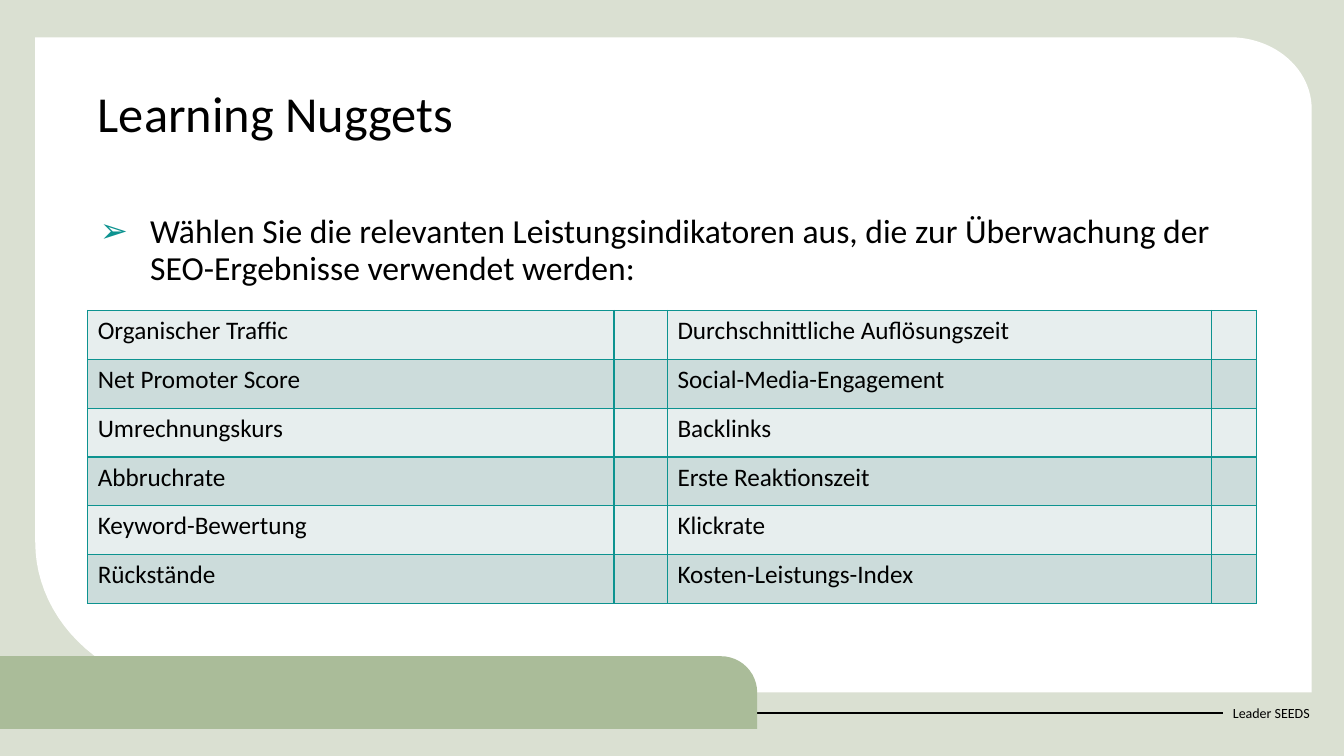
from math import cos, pi, sin

from lxml import etree
from pptx import Presentation
from pptx.dml.color import RGBColor
from pptx.enum.shapes import MSO_CONNECTOR, MSO_SHAPE
from pptx.enum.text import MSO_ANCHOR, MSO_AUTO_SIZE, PP_ALIGN
from pptx.oxml.ns import qn
from pptx.util import Inches, Pt

STRAIGHT = MSO_CONNECTOR.STRAIGHT
ROUND_CORNER = MSO_SHAPE.ROUND_1_RECTANGLE
TOP, MIDDLE = MSO_ANCHOR.TOP, MSO_ANCHOR.MIDDLE
NO_AUTOFIT = MSO_AUTO_SIZE.NONE
LEFT = PP_ALIGN.LEFT

FONT = "Calibri"
BLACK, WHITE, TEAL = "000000", "FFFFFF", "0D9390"
SAGE, PALE_SAGE = "AABC99", "DAE0D2"
ROW_FILLS = ("E7EEEE", "CCDCDB")
COLUMN_WIDTHS = (5.22, 0.53, 5.4, 0.44)
INDICATORS = (
    ("Organischer Traffic", "Durchschnittliche Auflösungszeit"),
    ("Net Promoter Score", "Social-Media-Engagement"),
    ("Umrechnungskurs", "Backlinks"),
    ("Abbruchrate", "Erste Reaktionszeit"),
    ("Keyword-Bewertung", "Klickrate"),
    ("Rückstände", "Kosten-Leistungs-Index"),
)


def color(value):
    """Turn a hex string into a colour."""
    return RGBColor.from_string(value)


def paint(shape, fill):
    """Give a shape a plain fill without line or shadow."""
    shape.shadow.inherit = False
    shape.fill.solid()
    shape.fill.fore_color.rgb = color(fill)
    shape.line.fill.background()


def write(frame, text, size):
    """Put one left-aligned black paragraph in a text frame."""
    frame.text = text
    para = frame.paragraphs[0]
    para.alignment = LEFT
    for span in para.runs:
        span.font.name = FONT
        span.font.size = Pt(size)
        span.font.color.rgb = color(BLACK)
    return para


def place(shape, box):
    """Move a shape to a box given in inches."""
    shape.left, shape.top, shape.width, shape.height = map(Inches, box)


def corner(center, radii, start, steps=24):
    """Return the points of a quarter ellipse, clockwise from a start angle."""
    angles = [start + pi / 2 * step / steps for step in range(steps + 1)]
    return [(center[0] + radii[0] * cos(angle), center[1] + radii[1] * sin(angle))
            for angle in angles]


def add_panel(page, box):
    """Draw the white panel with two rounded corners."""
    left, top, width, height = box
    right, bottom = left + width, top + height
    small, large = (0.81, 0.71), (1.7, 1.49)
    points = corner((right - small[0], top + small[1]), small, -pi / 2)
    points.append((right, bottom))
    points += corner((left + large[0], bottom - large[1]), large, pi / 2)
    builder = page.shapes.build_freeform(Inches(left), Inches(top))
    builder.add_line_segments([(Inches(x), Inches(y)) for x, y in points], close=True)
    paint(builder.convert_to_shape(), WHITE)


def add_footer(page, box):
    """Draw the footer line, its label and the sage banner."""
    left, top, width, height = box
    label_width, label_height = 1.01, 0.4
    label_left, label_top = left + width - label_width, top + 0.36
    label = page.shapes.add_textbox(
        *map(Inches, (label_left, label_top, label_width, label_height)))
    label.text_frame.word_wrap = True
    label.text_frame.vertical_anchor = MIDDLE
    write(label.text_frame, "Leader SEEDS", 10)

    line_y = label_top + label_height / 2
    line = page.shapes.add_connector(
        STRAIGHT, *map(Inches, (left, line_y, label_left, line_y)))
    line.end_connect(label, 1)
    line.line.color.rgb = color(BLACK)
    line.line.width = Pt(1.5)
    etree.SubElement(line.element.spPr, qn("a:effectLst"))

    banner = page.shapes.add_shape(
        ROUND_CORNER, *map(Inches, (left, top, 7.51, height)))
    banner.adjustments[0] = 0.5
    paint(banner, SAGE)


def fill_placeholder(page, placeholder, box, text, size):
    """Bring a placeholder to the front, place it and fill it."""
    page.shapes.element.append(placeholder.element)
    place(placeholder, box)
    frame = placeholder.text_frame
    frame.word_wrap = True
    frame.auto_size = NO_AUTOFIT
    frame.vertical_anchor = TOP
    para = write(frame, text, size)
    para.line_spacing = 0.9
    para.space_before = Pt(0)
    return para


def add_bullet(para, char):
    """Give a paragraph a teal bullet with a hanging indent."""
    properties = para._p.get_or_add_pPr()
    properties.set("marL", str(Inches(0.52)))
    properties.set("indent", str(Inches(-0.5)))
    bullet_color = etree.SubElement(properties, qn("a:buClr"))
    etree.SubElement(bullet_color, qn("a:srgbClr"), val=TEAL)
    etree.SubElement(properties, qn("a:buChar"), char=char)


def add_borders(cell):
    """Draw teal lines on the four sides of a cell."""
    properties = cell._tc.get_or_add_tcPr()
    for side in ("lnL", "lnR", "lnT", "lnB"):
        line = etree.SubElement(properties, qn(f"a:{side}"), w=str(Pt(1)))
        fill = etree.SubElement(line, qn("a:solidFill"))
        etree.SubElement(fill, qn("a:srgbClr"), val=TEAL)


def add_indicators(page, box):
    """Add the table of indicators with empty cells for ticking."""
    frame = page.shapes.add_table(
        len(INDICATORS), len(COLUMN_WIDTHS), *map(Inches, box))
    table = frame.table
    table.first_row = False
    table.horz_banding = False
    for column, width in zip(table.columns, COLUMN_WIDTHS):
        column.width = Inches(width)
    for index, (first, second) in enumerate(INDICATORS):
        for cell, text in zip(table.rows[index].cells, (first, "", second, "")):
            add_borders(cell)
            cell.fill.solid()
            cell.fill.fore_color.rgb = color(ROW_FILLS[index % 2])
            write(cell.text_frame, text, 18)


def build_page(deck):
    """Build the learning nuggets slide."""
    page = deck.slides.add_slide(deck.slide_layouts[1])
    page.background.fill.solid()
    page.background.fill.fore_color.rgb = color(PALE_SAGE)
    title, body = page.placeholders
    left, width = 0.87, 11.59
    add_panel(page, (0.35, 0.37, 12.66, 6.5))
    add_footer(page, (0, 6.51, 13.14, 0.72))
    fill_placeholder(page, title, (left, 0.83, width, 0.88), "Learning Nuggets", 36)
    task = fill_placeholder(
        page, body, (left, 2.08, width, 0.9),
        "Wählen Sie die relevanten Leistungsindikatoren aus, die zur "
        "Überwachung der SEO-Ergebnisse verwendet werden:", 24)
    add_bullet(task, "➢")
    add_indicators(page, (left, 3.08, width, 2.91))


def main():
    """Create the deck and save it."""
    deck = Presentation()
    deck.slide_width, deck.slide_height = Inches(13.33), Inches(7.5)
    build_page(deck)
    deck.save("out.pptx")


if __name__ == "__main__":
    main()
